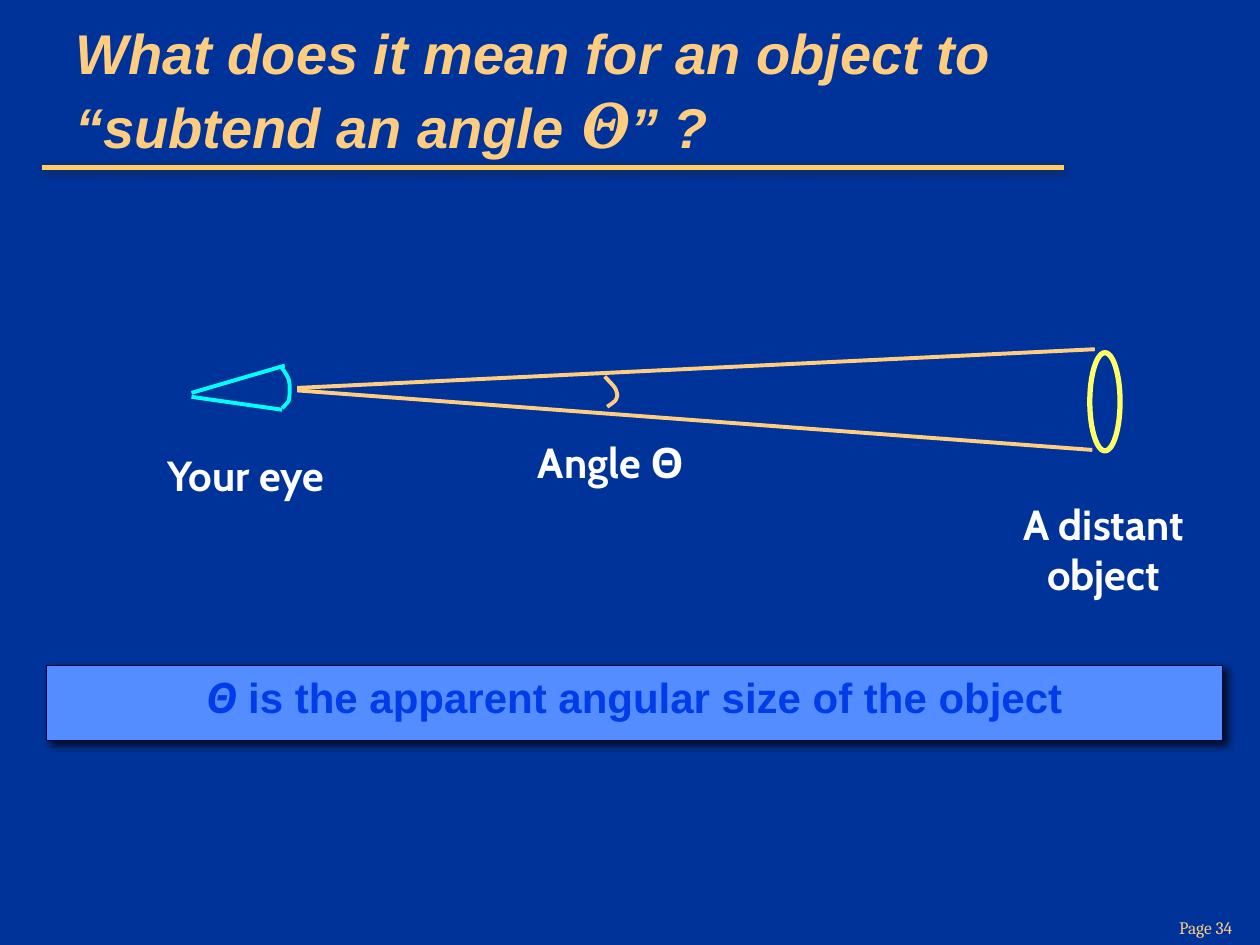
from lxml import etree
from pptx import Presentation
from pptx.dml.color import RGBColor
from pptx.enum.shapes import MSO_CONNECTOR, MSO_SHAPE
from pptx.enum.text import MSO_ANCHOR, MSO_AUTO_SIZE, PP_ALIGN
from pptx.oxml.ns import qn
from pptx.util import Cm, Pt

LINE = MSO_CONNECTOR.STRAIGHT
RECT, OVAL = MSO_SHAPE.RECTANGLE, MSO_SHAPE.OVAL
TOP, MID = MSO_ANCHOR.TOP, MSO_ANCHOR.MIDDLE
LEFT, MIDDLE, RIGHT = PP_ALIGN.LEFT, PP_ALIGN.CENTER, PP_ALIGN.RIGHT
FIXED = MSO_AUTO_SIZE.NONE
SAND, CYAN, WHITE = "FFCD7F", "00FFFF", "FFFFFF"
hue = RGBColor.from_string


def write(shape, runs, color, align, anchor=TOP):
    frame = shape.text_frame
    box = dict(word_wrap=True, auto_size=FIXED, vertical_anchor=anchor,
               margin_left=Cm(0.25), margin_right=Cm(0.25),
               margin_top=Cm(0.13), margin_bottom=Cm(0.13))
    for key, val in box.items():
        setattr(frame, key, val)
    para = frame.paragraphs[0]
    para.alignment = align
    for text, form in runs:
        run = para.add_run()
        run.text = text
        run.font.color.rgb = hue(color)
        for key, val in form.items():
            setattr(run.font, key, val)


def shade(shape, color, dist):
    props = shape.element.spPr
    for old in props.findall(qn("a:effectLst")):
        props.remove(old)
    list_el = etree.SubElement(props, qn("a:effectLst"))
    if color:
        cast = etree.SubElement(list_el, qn("a:outerShdw"), blurRad=str(Pt(5)),
                                dist=str(Pt(dist)), dir="2700000", algn="ctr")
        tint = etree.SubElement(cast, qn("a:srgbClr"), val=color)
        etree.SubElement(tint, qn("a:alpha"), val="75000")


deck = Presentation()
deck.slide_width, deck.slide_height = Cm(25.4), Cm(19.05)
slide = deck.slides.add_slide(deck.slide_layouts[5])
slide.background.fill.solid()
slide.background.fill.fore_color.rgb = hue("003399")
shapes = slide.shapes

title = shapes.title
place = dict(left=Cm(1.27), top=Cm(0), width=Cm(19.89), height=Cm(3.61))
for key, val in place.items():
    setattr(title, key, val)
head = dict(name="Arial", size=Pt(32), bold=True, italic=True)
write(title, [("What does it mean for an object to “subtend an angle ", head),
              ("Θ", head | dict(name="Cambria", size=Pt(36))),
              ("” ?", head)], SAND, LEFT, MID)

lines = [
    ((0.84, 3.38, 21.44, 3.38), "FFCC66", 3, "232323"),
    ((5.74, 7.37, 3.86, 7.92), CYAN, 2.25, None),
    ((5.69, 8.26, 3.86, 8), CYAN, 2.25, None),
    ((5.99, 7.82, 22.07, 7.04), SAND, 2.25, None),
    ((5.99, 7.87, 22.02, 9.07), SAND, 2.25, None),
]
for ends, color, width, dark in lines:
    line = shapes.add_connector(LINE, *map(Cm, ends))
    line.line.color.rgb = hue(color)
    line.line.width = Pt(width)
    shade(line, dark, 1.4)

curves = [
    (CYAN, [(5.66, 7.39), (5.74, 7.49), (5.79, 7.57), (5.82, 7.65),
            (5.84, 7.72), (5.84, 7.77), (5.84, 7.85),
            (5.84, 7.92), (5.84, 8), (5.82, 8.08),
            (5.79, 8.13), (5.72, 8.2), (5.69, 8.23)]),
    (SAND, [(12.19, 7.59), (12.29, 7.7), (12.4, 7.8), (12.42, 7.87),
            (12.45, 7.95), (12.45, 7.98), (12.42, 8.05),
            (12.4, 8.1), (12.27, 8.18), (12.24, 8.2)]),
]
for color, knots in curves:
    dots = []
    for i in range(0, len(knots) - 1, 3):
        for step in range(1, 7):
            t = step / 6
            mix = ((1 - t)**3, 3 * t * (1 - t)**2, 3 * t**2 * (1 - t), t**3)
            dots.append([Cm(sum(m * k[axis] for m, k in zip(mix, knots[i:i + 4])))
                         for axis in (0, 1)])
    pen = shapes.build_freeform(*map(Cm, knots[0]))
    pen.add_line_segments(dots, close=False)
    arc = pen.convert_to_shape()
    arc.shadow.inherit = False
    arc.fill.background()
    arc.line.color.rgb = hue(color)
    arc.line.width = Pt(2.25)

disk = shapes.add_shape(OVAL, *map(Cm, (21.97, 7.11, 0.61, 1.98)))
disk.shadow.inherit = False
disk.fill.background()
disk.line.color.rgb = hue("FFFF66")
disk.line.width = Pt(3)

bar = shapes.add_shape(RECT, *map(Cm, (0.94, 13.41, 23.7, 1.52)))
bar.fill.solid()
bar.fill.fore_color.rgb = hue("548DFF")
bar.line.color.rgb = hue("01023F")
bar.line.width = Pt(0.75)
shade(bar, "000000", 2.8)
bold = dict(size=Pt(24), bold=True)
write(bar, [("Θ ", bold | dict(name="Open Sans", italic=True)),
            ("is the apparent angular size of the object", bold | dict(name="Arial"))],
      "003DE8", MIDDLE)

cabin = bold | dict(name="Cabin")
labels = [
    ((2.67, 8.94, 4.57, 1.27), [("Your eye", cabin)]),
    ((19.96, 9.91, 4.57, 2.29), [("A distant object", cabin)]),
    ((9.37, 8.66, 5.89, 1.27), [("Angle ", cabin),
                                ("Θ", bold | dict(name="Open Sans"))]),
]
for spot, runs in labels:
    write(shapes.add_textbox(*map(Cm, spot)), runs, WHITE, MIDDLE)

page = shapes.add_textbox(*map(Cm, (18.82, 18.36, 6.58, 0.69)))
write(page, [("Page 34", dict(name="Cambria", size=Pt(10)))], SAND, RIGHT)
page.text_frame.margin_right = Cm(0.56)

deck.save("out.pptx")
